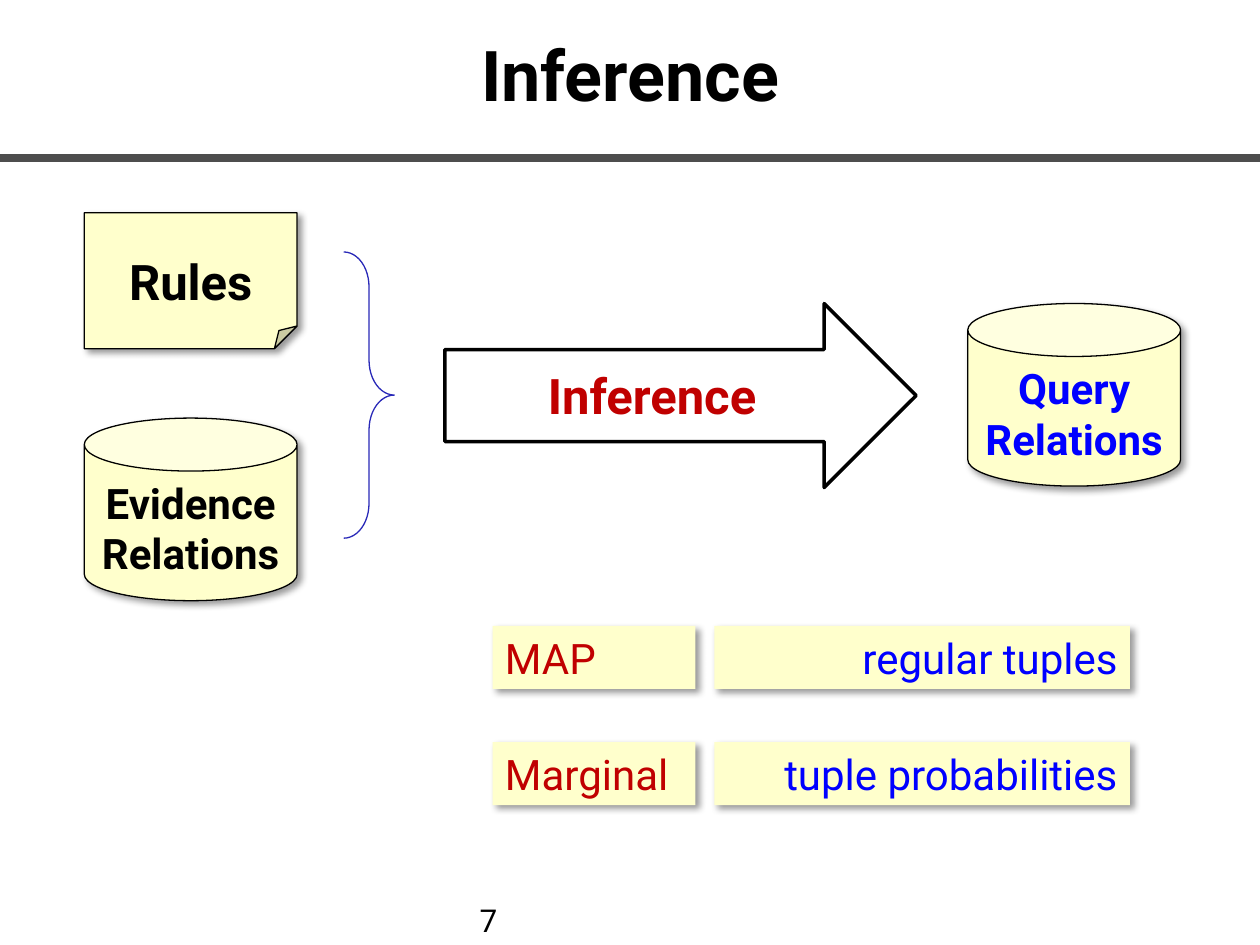
"""Build the Inference slide: rules and evidence lead to query relations."""
from lxml.etree import SubElement
from pptx import Presentation
from pptx.dml.color import RGBColor
from pptx.enum.shapes import MSO_CONNECTOR, MSO_SHAPE as Shape
from pptx.enum.text import MSO_ANCHOR as Anchor, PP_ALIGN as Align
from pptx.oxml.ns import qn
from pptx.util import Cm, Pt

BLACK = RGBColor(0x00, 0x00, 0x00)
WHITE = RGBColor(0xFF, 0xFF, 0xFF)
GRAY = RGBColor(0x4D, 0x4D, 0x4D)
CREAM = RGBColor(0xFF, 0xFF, 0xCC)
RED = RGBColor(0xC0, 0x00, 0x00)
BLUE = RGBColor(0x00, 0x00, 0xFF)
INDIGO = RGBColor(0x29, 0x29, 0xB8)
FONT = "Roboto"
WIDTH, HEIGHT = 25.4, 19.05

TITLE = "Inference"
PAGE = "7"
RULES = "Rules"
CANS = [
    (1.7, 8.43, ["Evidence", "Relations"], BLACK),
    (19.51, 6.12, ["Query", "Relations"], BLUE),
]
MODES = [("MAP", "regular tuples"), ("Marginal", "tuple probabilities")]
MODE_COLUMNS = [(9.93, 4.09, RED, Align.LEFT), (14.4, 8.38, BLUE, Align.RIGHT)]
MODE_TOP, MODE_PITCH, MODE_HEIGHT = 12.62, 2.34, 1.27


def add_text(shape, lines, size, color, bold=False, align=Align.CENTER, anchor=Anchor.MIDDLE):
    frame = shape.text_frame
    frame.word_wrap = True
    frame.vertical_anchor = anchor
    for index, line in enumerate(lines):
        paragraph = frame.add_paragraph() if index else frame.paragraphs[0]
        paragraph.alignment = align
        run = paragraph.add_run()
        run.text = line
        run.font.name = FONT
        run.font.size = Pt(size)
        run.font.bold = bold
        run.font.color.rgb = color


def add_label(slide, box, text, size, color, bold=False, align=Align.CENTER):
    shape = slide.shapes.add_textbox(*map(Cm, box))
    add_text(shape, [text], size, color, bold, align)


def add_figure(slide, kind, box, fill=None, line=None, weight=0.75, shadow=False):
    shape = slide.shapes.add_shape(kind, *map(Cm, box))
    shape.shadow.inherit = False
    if fill is None:
        shape.fill.background()
    else:
        shape.fill.solid()
        shape.fill.fore_color.rgb = fill
    if line is None:
        shape.line.fill.background()
    else:
        shape.line.color.rgb = line
        shape.line.width = Pt(weight)
    if shadow:
        effects = shape._element.spPr.find(qn("a:effectLst"))
        outer = SubElement(effects, qn("a:outerShdw"), blurRad=str(Pt(4)), dist=str(Pt(3)),
                           dir=str(45 * 60000), algn="tl", rotWithShape="0")
        tint = SubElement(outer, qn("a:srgbClr"), val=str(BLACK))
        SubElement(tint, qn("a:alpha"), val="40000")
    return shape


def add_header(slide):
    rule = slide.shapes.add_connector(MSO_CONNECTOR.STRAIGHT, 0, Cm(3.18), Cm(WIDTH), Cm(3.18))
    rule.line.color.rgb = GRAY
    rule.line.width = Pt(4.5)
    SubElement(rule._element.spPr, qn("a:effectLst"))
    add_label(slide, (0, 0, WIDTH, 2.97), TITLE, 40, BLACK, True)
    add_label(slide, (9.42, 18.03, 5.92, 1.02), PAGE, 18, BLACK, align=Align.LEFT)


def add_flow(slide):
    note = add_figure(slide, Shape.FOLDED_CORNER, (1.7, 4.29, 4.29, 2.74), CREAM, BLACK, shadow=True)
    add_text(note, [RULES], 28, BLACK, True)
    note.text_frame.margin_top = Cm(0.58)
    for left, top, lines, color in CANS:
        can = add_figure(slide, Shape.CAN, (left, top, 4.29, 3.68), CREAM, BLACK, shadow=True)
        can.adjustments[0] = 0.29
        add_text(can, lines, 24, color, True, anchor=Anchor.TOP)
    brace = add_figure(slide, Shape.RIGHT_BRACE, (6.93, 5.08, 1.02, 5.77), line=INDIGO)
    brace.adjustments[0] = 0.69
    add_figure(slide, Shape.RIGHT_ARROW, (8.97, 6.12, 9.5, 3.71), WHITE, BLACK, 2)
    add_label(slide, (10.67, 7.37, 4.95, 1.17), TITLE, 28, RED, True)


def add_modes(slide):
    for row, texts in enumerate(MODES):
        top = MODE_TOP + row * MODE_PITCH
        for text, (left, width, color, align) in zip(texts, MODE_COLUMNS):
            cell = add_figure(slide, Shape.RECTANGLE, (left, top, width, MODE_HEIGHT), CREAM, shadow=True)
            add_text(cell, [text], 24, color, align=align)


def main():
    presentation = Presentation()
    presentation.slide_width = Cm(WIDTH)
    presentation.slide_height = Cm(HEIGHT)
    slide = presentation.slides.add_slide(presentation.slide_layouts[6])
    add_header(slide)
    add_flow(slide)
    add_modes(slide)
    presentation.save("out.pptx")


if __name__ == "__main__":
    main()
